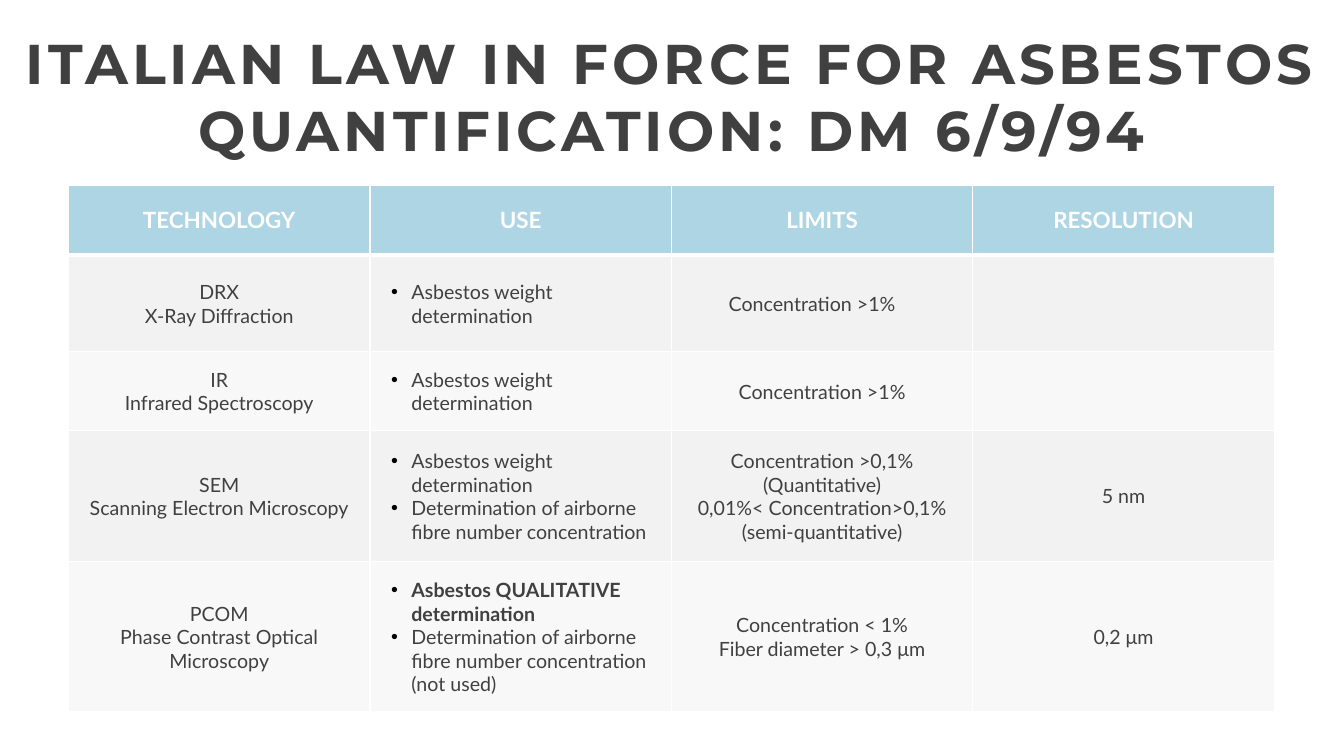
from lxml import etree
from pptx import Presentation
from pptx.dml.color import RGBColor
from pptx.enum import text
from pptx.oxml import ns
from pptx.util import Inches, Pt


def add_element(parent, tag, **attributes):
    return etree.SubElement(parent, ns.qn(tag), attributes)


def style_runs(paragraph, font_name, size, color, bold):
    for run in paragraph.runs:
        run.font.name = font_name
        run.font.size = Pt(size)
        run.font.bold = bold
        run.font.color.rgb = RGBColor.from_string(color)


WEIGHT = "Asbestos weight determination"
AIRBORNE = "Determination of airborne fibre number concentration"
QUALITATIVE = "Asbestos QUALITATIVE determination"
USE_COLUMN = 1
ROWS = [
    ["TECHNOLOGY", "USE", "LIMITS", "RESOLUTION"],
    ["DRX\nX-Ray Diffraction", WEIGHT, "Concentration >1%", ""],
    ["IR\nInfrared Spectroscopy", WEIGHT, "Concentration >1%", ""],
    ["SEM\nScanning Electron Microscopy", f"{WEIGHT}\n{AIRBORNE}",
     "Concentration >0,1% (Quantitative)\n0,01%< Concentration>0,1%\n(semi-quantitative)", "5 nm"],
    ["PCOM\nPhase Contrast Optical Microscopy", f"{QUALITATIVE}\n{AIRBORNE} (not used)",
     "Concentration < 1%\nFiber diameter > 0,3 μm", "0,2 μm"],
]
ROW_HEIGHTS = [0.69, 0.96, 0.78, 1.3, 1.49]

presentation = Presentation()
presentation.slide_width = Inches(13.33)
presentation.slide_height = Inches(7.5)
slide = presentation.slides.add_slide(presentation.slide_layouts[5])

title = slide.shapes.title
title.left, title.top = Inches(0), Inches(0.23)
title.width, title.height = Inches(13.33), Inches(1.45)
title.text_frame.text = "ITALIAN LAW IN FORCE FOR ASBESTOS QUANTIFICATION: DM 6/9/94"
title.text_frame.vertical_anchor = text.MSO_ANCHOR.TOP
title_paragraph = title.text_frame.paragraphs[0]
title_paragraph.alignment = text.PP_ALIGN.CENTER
style_runs(title_paragraph, "Montserrat", 40, "404040", True)
title_paragraph.runs[0].font._element.set("spc", "300")

table = slide.shapes.add_table(
    len(ROWS), 4, Inches(0.68), Inches(1.84), Inches(11.98), Inches(5.22)).table
table.horz_banding = False
for column in table.columns:
    column.width = Inches(2.99)

for row_index, (row_texts, height) in enumerate(zip(ROWS, ROW_HEIGHTS)):
    table.rows[row_index].height = Inches(height)
    is_header = row_index == 0
    for column_index, cell_text in enumerate(row_texts):
        cell = table.cell(row_index, column_index)
        cell.text_frame.text = cell_text
        cell.vertical_anchor = text.MSO_ANCHOR.MIDDLE
        if not is_header:
            cell.margin_left = cell.margin_top = cell.margin_right = Inches(0.01)
            cell.margin_bottom = 0

        for paragraph in cell.text_frame.paragraphs:
            if is_header:
                style_runs(paragraph, "Lato", 16, "FFFFFF", True)
            else:
                style_runs(paragraph, "Lato", 14, "404040", paragraph.text == QUALITATIVE)
            if is_header or column_index != USE_COLUMN:
                paragraph.alignment = text.PP_ALIGN.CENTER
                continue
            properties = paragraph._p.get_or_add_pPr()
            properties.set("marL", str(Inches(0.4)))
            properties.set("indent", str(Inches(-0.2)))
            bullet_color = add_element(properties, "a:buClr")
            add_element(bullet_color, "a:srgbClr", val="000000")
            add_element(properties, "a:buFont", typeface="Arial")
            add_element(properties, "a:buChar", char="•")

        cell_properties = cell._tc.get_or_add_tcPr()
        for side in ("L", "R", "T", "B"):
            under_header = (row_index, side) in ((0, "B"), (1, "T"))
            border = add_element(cell_properties, f"a:ln{side}", w=str(Pt(3 if under_header else 1)))
            border_fill = add_element(border, "a:solidFill")
            add_element(border_fill, "a:srgbClr", val="FFFFFF")
        cell_fill = add_element(cell_properties, "a:solidFill")
        fill_color = add_element(cell_fill, "a:srgbClr", val="AED5E4" if is_header else "F2F2F2")
        if not is_header and row_index % 2 == 0:
            add_element(fill_color, "a:alpha", val="50000")

table.cell(1, 2).margin_right = Inches(0.21)

presentation.save("out.pptx")
